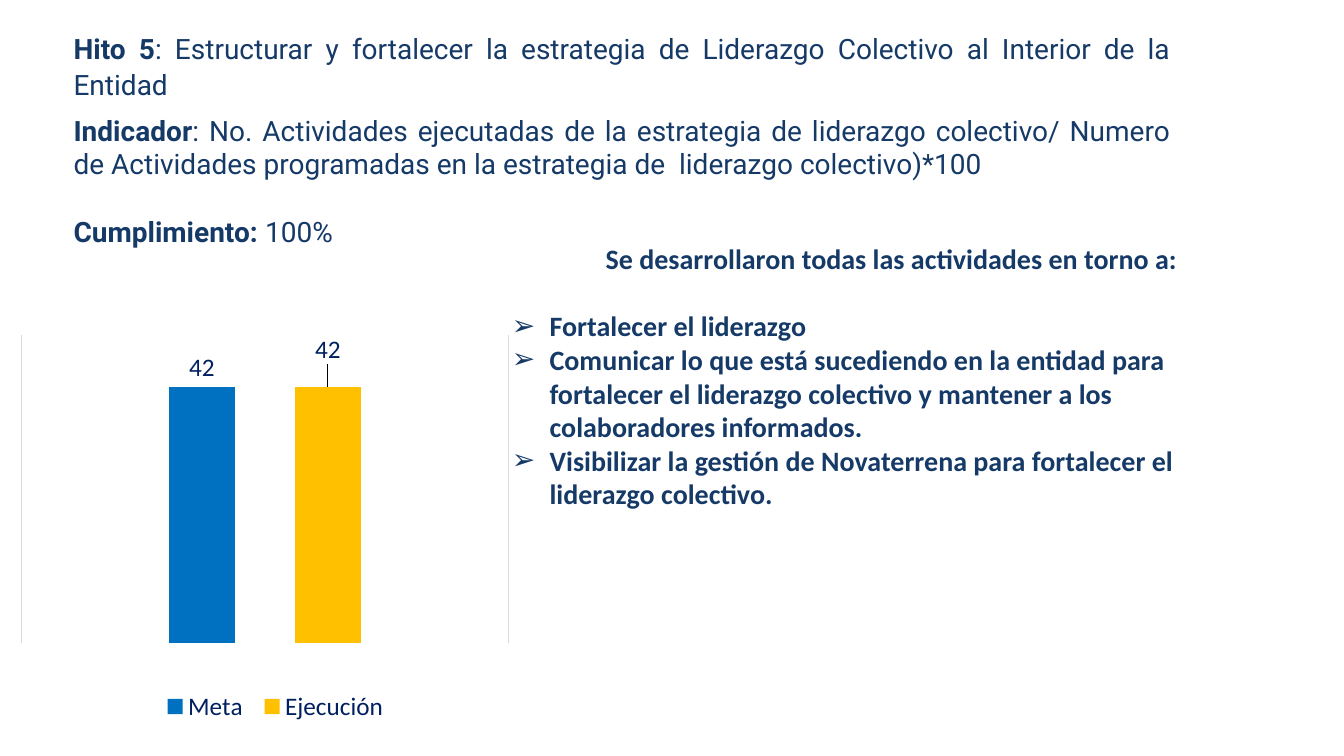
"""Builds the milestone 5 slide: heading text, activity list and goal chart."""
import pptx
import pptx.util
import pptx.oxml
import pptx.chart.data
import pptx.dml.color
import pptx.enum.chart
import pptx.enum.text
import pptx.oxml.ns

Pt = pptx.util.Pt
qn = pptx.oxml.ns.qn
ALIGN = pptx.enum.text.PP_ALIGN
COLORS = {"text": "163A68", "label": "002060", "grid": "D9D9D9",
          "Meta": "0070C0", "Ejecución ": "FFC000"}


def rgb(name):
    """Return the named colour."""
    return pptx.dml.color.RGBColor.from_string(COLORS[name])


def style(font, size, name, color, bold=False):
    """Format a font."""
    font.size, font.name, font.bold = Pt(size), name, bold
    font.color.rgb = rgb(color)


def add_text_frame(s, box):
    """Add a wrapping text box and return its frame."""
    tf = s.shapes.add_textbox(*map(Pt, box)).text_frame
    tf.word_wrap = True
    tf.auto_size = pptx.enum.text.MSO_AUTO_SIZE.SHAPE_TO_FIT_TEXT
    return tf


def next_paragraph(tf, index):
    """Return the first paragraph or a new one."""
    return tf.add_paragraph() if index else tf.paragraphs[0]


def add_milestone(s, box):
    """Add the milestone, indicator and result paragraphs."""
    rows = [
        ("Hito 5", ": Estructurar y fortalecer la estrategia de Liderazgo "
         "Colectivo al Interior de la Entidad", 0, 8, 1.07),
        ("Indicador", ": No. Actividades ejecutadas de la estrategia de "
         "liderazgo colectivo/ Numero de Actividades programadas en la "
         "estrategia de  liderazgo colectivo)*100", 0.5, 0, 1),
        ("Cumplimiento:", " 100%", 24.5, 0, 1),
    ]
    tf = add_text_frame(s, box)
    for i, (label, body, before, after, spacing) in enumerate(rows):
        p = next_paragraph(tf, i)
        p.alignment, p.line_spacing = ALIGN.JUSTIFY, spacing
        p.space_before, p.space_after = Pt(before), Pt(after)
        for text, bold in ((label, True), (body, False)):
            r = p.add_run()
            r.text = text
            style(r.font, 20, "Roboto", "text", bold)


def add_bullet(p):
    """Give a paragraph a hanging arrow bullet."""
    pPr = p._p.get_or_add_pPr()
    pPr.set("marL", str(Pt(27)))
    pPr.set("indent", str(-Pt(27)))
    pPr.append(pPr.makeelement(qn("a:buFont"), {"typeface": "Arial"}))
    pPr.append(pPr.makeelement(qn("a:buChar"), {"char": "➢"}))


def add_activities(s, box):
    """Add the centred lead line and its bullet list."""
    lines = [
        "Se desarrollaron todas las actividades en torno a:",
        "Fortalecer el liderazgo",
        "Comunicar lo que está sucediendo en la entidad para fortalecer el "
        "liderazgo colectivo y mantener a los colaboradores informados.",
        "Visibilizar la gestión de Novaterrena para fortalecer el liderazgo "
        "colectivo.",
    ]
    tf = add_text_frame(s, box)
    for i, line in enumerate(lines):
        p = next_paragraph(tf, i)
        p.text = line
        if i:
            add_bullet(p)
        else:
            p.alignment, p.space_after = ALIGN.CENTER, Pt(24)
        style(p.runs[0].font, 20, "Calibri", "text", True)


def set_layout(parent, index, **values):
    """Place a chart part by fractions of the chart."""
    for old in parent.findall(qn("c:layout")):
        parent.remove(old)
    layout = parent.makeelement(qn("c:layout"), {})
    manual = layout.makeelement(qn("c:manualLayout"), {})
    layout.append(manual)
    for tag, value in values.items():
        manual.append(manual.makeelement(qn("c:" + tag), {"val": str(value)}))
    parent.insert(index, layout)


def add_goal_chart(s, box):
    """Add the column chart of goal against execution."""
    data = pptx.chart.data.CategoryChartData()
    data.categories = ["1"]
    for name in ("Meta", "Ejecución "):
        data.add_series(name, [5])
    kind = pptx.enum.chart.XL_CHART_TYPE.COLUMN_CLUSTERED
    chart = s.shapes.add_chart(kind, *map(Pt, box), data).chart
    chart.has_title = False
    chart.font.size, chart.font.name = Pt(10), "Calibri"
    chart.category_axis.visible = chart.value_axis.visible = False
    chart.value_axis.has_major_gridlines = False
    chart.value_axis.minimum_scale, chart.value_axis.maximum_scale = 0, 6
    grid = chart.category_axis.major_gridlines.format.line
    grid.color.rgb, grid.width = rgb("grid"), Pt(0.75)

    plot = chart.plots[0]
    plot.vary_by_categories = False
    plot.gap_width, plot.overlap = 444, -90
    outside = pptx.enum.chart.XL_LABEL_POSITION.OUTSIDE_END
    for series, lift in zip(plot.series, (0, -0.04)):
        series.format.fill.solid()
        series.format.fill.fore_color.rgb = rgb(series.name)
        labels = series.data_labels
        labels.show_value, labels.position = True, outside
        style(labels.font, 18, "Calibri", "label")
        label = series.points[0].data_label
        label.text_frame.text = "42"
        style(label.text_frame.paragraphs[0].runs[0].font,
              18, "Calibri", "label")
        label.position = outside
        if lift:
            set_layout(labels._element.find(qn("c:dLbl")), 1, x=0, y=lift)

    chart.has_legend = True
    legend = chart.legend
    legend.position = pptx.enum.chart.XL_LEGEND_POSITION.TOP
    legend.include_in_layout = False
    style(legend.font, 18, "Calibri", "label")
    set_layout(legend._element, 1, xMode="edge", yMode="edge",
               x=0.29, y=0.79, w=0.46, h=0.09)
    set_layout(plot._element.getparent(), 0, layoutTarget="inner",
               xMode="edge", yMode="edge", x=0.044, y=0.022, w=0.903, h=0.674)


def main():
    """Build and save the slide."""
    prs = pptx.Presentation()
    prs.slide_width, prs.slide_height = Pt(960), Pt(540)
    s = prs.slides.add_slide(prs.slide_layouts[6])
    add_milestone(s, (45.5, 17.5, 798, 192))
    add_activities(s, (358.5, 169, 556.5, 201))
    add_goal_chart(s, (-1.5, 232.5, 385, 326))
    prs.save("out.pptx")


if __name__ == "__main__":
    main()
